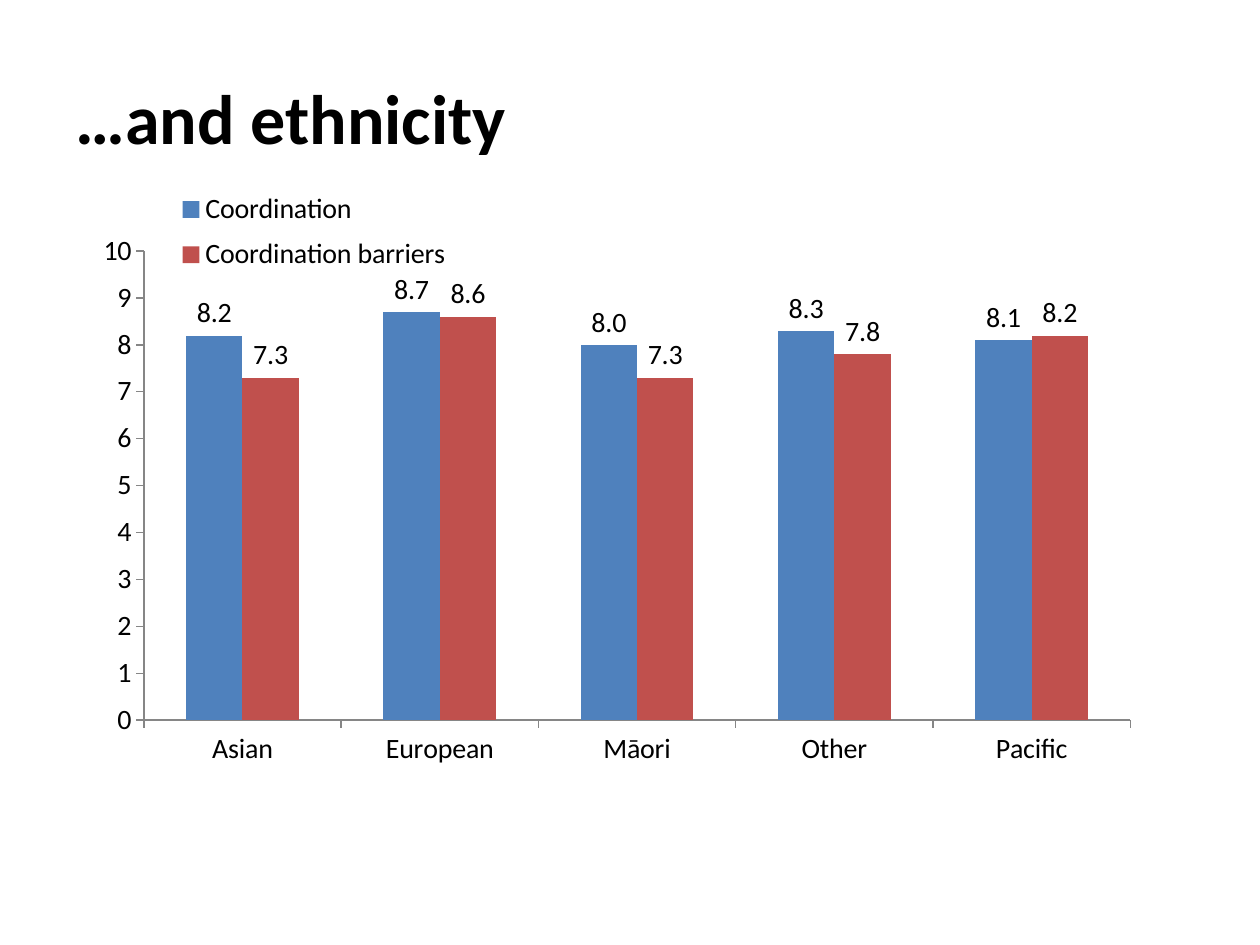
from pptx import Presentation
from pptx.chart.data import CategoryChartData
from pptx.dml.color import RGBColor
from pptx.enum.chart import XL_CHART_TYPE, XL_LABEL_POSITION, XL_LEGEND_POSITION, XL_TICK_MARK
from pptx.enum.text import MSO_ANCHOR, PP_ALIGN
from pptx.oxml import parse_xml
from pptx.oxml.ns import nsdecls, qn
from pptx.util import Cm, Pt

BLACK = RGBColor(0x00, 0x00, 0x00)
GREY = RGBColor(0x86, 0x86, 0x86)
BLUE = RGBColor(0x4F, 0x81, 0xBD)
RED = RGBColor(0xC0, 0x50, 0x4D)

ETHNICITIES = ["Asian", "European", "Māori", "Other", "Pacific"]
SCORES = [
    ("Coordination", BLUE, [8.2, 8.7, 8.0, 8.3, 8.1]),
    ("Coordination barriers", RED, [7.3, 8.6, 7.3, 7.8, 8.2]),
]


class SlideBuilder:
    """Hold the text style and the current slide, and add elements to it."""

    font_name = "Calibri"

    def __init__(self, deck):
        self.slide = deck.slides.add_slide(deck.slide_layouts[5])

    def style_font(self, font, size, bold=False):
        font.name = self.font_name
        font.size = Pt(size)
        font.bold = bold
        font.color.rgb = BLACK

    def add_title(self, text, left, top, width, height):
        box = self.slide.shapes.title
        box.left, box.top, box.width, box.height = left, top, width, height
        frame = box.text_frame
        frame.text = text
        frame.vertical_anchor = MSO_ANCHOR.MIDDLE
        para = frame.paragraphs[0]
        para.alignment = PP_ALIGN.LEFT
        self.style_font(para.font, 40, bold=True)

    def set_layout(self, parent, position, left, top, width, height, target=""):
        for old in parent.findall(qn("c:layout")):
            parent.remove(old)
        modes = '<c:xMode val="edge"/><c:yMode val="edge"/>'
        layout = parse_xml(
            f'<c:layout {nsdecls("c")}><c:manualLayout>{target}{modes}'
            f'<c:x val="{left}"/><c:y val="{top}"/><c:w val="{width}"/><c:h val="{height}"/>'
            "</c:manualLayout></c:layout>"
        )
        parent.insert(position, layout)

    def style_axis(self, axis):
        axis.has_major_gridlines = False
        axis.major_tick_mark = XL_TICK_MARK.OUTSIDE
        axis.minor_tick_mark = XL_TICK_MARK.NONE
        axis.format.line.color.rgb = GREY
        axis.format.line.width = Pt(0.75)

    def add_column_chart(self, categories, scores, left, top, width, height):
        data = CategoryChartData(number_format="0.0")
        data.categories = categories
        for name, _, values in scores:
            data.add_series(name, values)
        chart = self.slide.shapes.add_chart(
            XL_CHART_TYPE.COLUMN_CLUSTERED, left, top, width, height, data
        ).chart
        chart.has_title = False
        self.style_font(chart.font, 16)

        plot = chart.plots[0]
        plot.gap_width = 150
        plot.overlap = 0
        plot.vary_by_categories = False
        for series, (_, color, _) in zip(plot.series, scores):
            series.format.fill.solid()
            series.format.fill.fore_color.rgb = color
            series.invert_if_negative = False
            labels = series.data_labels
            labels.show_value = True
            labels.number_format = "0.0"
            labels.number_format_is_linked = False
            labels.position = XL_LABEL_POSITION.OUTSIDE_END

        self.style_axis(chart.category_axis)
        self.style_axis(chart.value_axis)
        chart.value_axis.minimum_scale = 0
        chart.value_axis.maximum_scale = 10
        chart.value_axis.major_unit = 1
        chart.value_axis.tick_labels.number_format = "0"
        chart.value_axis.tick_labels.number_format_is_linked = False

        chart.has_legend = True
        chart.legend.position = XL_LEGEND_POSITION.RIGHT
        chart.legend.include_in_layout = True
        self.set_layout(chart.legend._element, 1, 0.08, 0.01, 0.28, 0.16)
        plot_area = chart._chartSpace.chart.plotArea
        inner = '<c:layoutTarget val="inner"/>'
        self.set_layout(plot_area, 0, 0.07, 0.12, 0.87, 0.74, inner)


def main():
    deck = Presentation()
    deck.slide_width, deck.slide_height = Cm(25.4), Cm(19.05)
    builder = SlideBuilder(deck)
    builder.add_title("…and ethnicity", Cm(1.27), Cm(0.76), Cm(22.86), Cm(3.18))
    builder.add_column_chart(ETHNICITIES, SCORES, Cm(1.3), Cm(3.53), Cm(22.86), Cm(12.78))
    deck.save("out.pptx")


if __name__ == "__main__":
    main()
